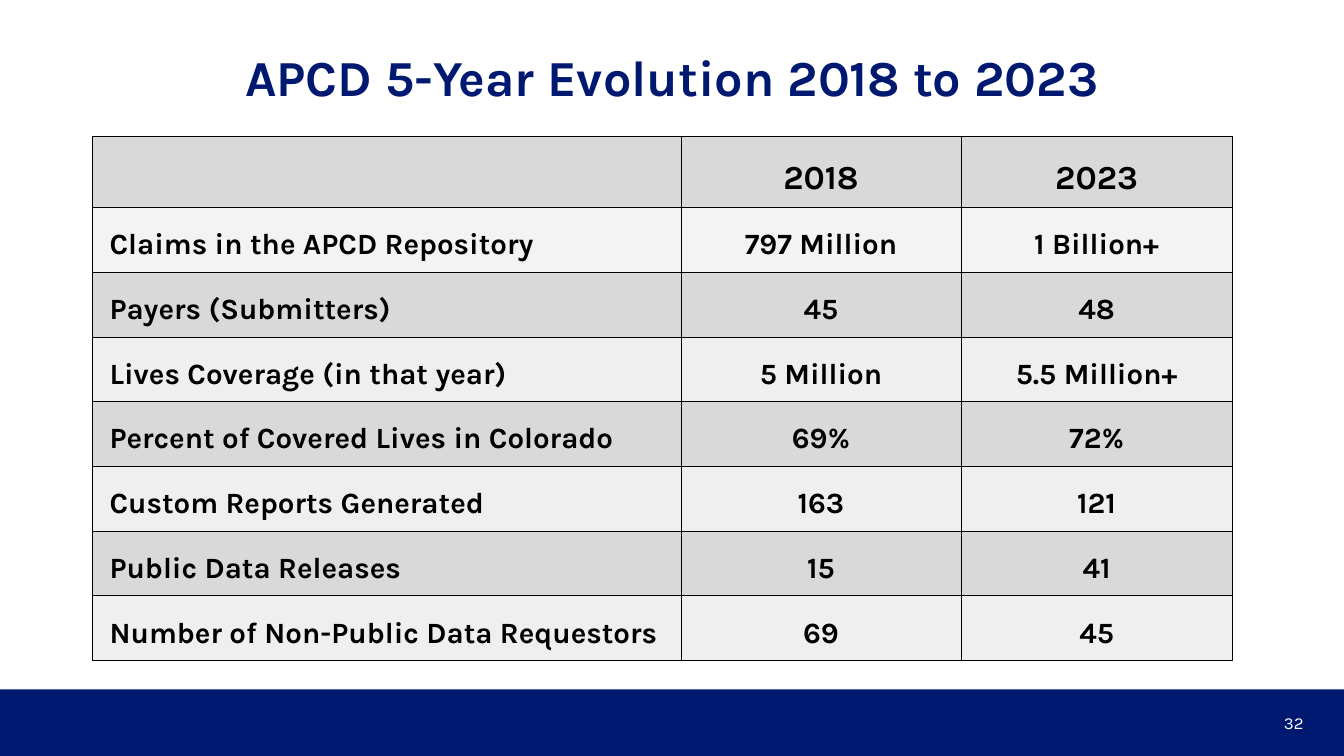
"""Build the APCD five-year evolution slide."""
from dataclasses import dataclass

from lxml.etree import SubElement as Sub
from pptx import Presentation
from pptx.dml.color import RGBColor
from pptx.enum.shapes import MSO_SHAPE as Kind
from pptx.enum.text import MSO_ANCHOR as Anchor, PP_ALIGN as Align
from pptx.oxml.ns import qn
from pptx.slide import Slide
from pptx.table import _Cell as Cell
from pptx.text.text import _Paragraph as Para
from pptx.util import Cm, Pt

NAVY = RGBColor(0x00, 0x19, 0x70)
WHITE = RGBColor(0xFF, 0xFF, 0xFF)
BLACK = RGBColor(0x00, 0x00, 0x00)
GREY = RGBColor(0xD9, 0xD9, 0xD9)
PALE = RGBColor(0xEF, 0xEF, 0xEF)
LIGHT = RGBColor(0xF3, 0xF3, 0xF3)
FONT = "Karla"
WIDTHS = (14.83, 7.06, 6.83)
HEAD, BODY = 1.8, 1.63
PAD = Cm(0.25)


@dataclass
class Row:
    label: str
    old: str
    new: str
    fill: RGBColor
    size: int = 21


@dataclass
class Label:
    text: str
    left: float
    top: float
    width: float
    size: int
    color: RGBColor
    align: Align
    bold: bool = False


ROWS = (
    Row("", "2018", "2023", GREY, 24),
    Row("Claims in the APCD Repository", "797 Million", "1 Billion+", LIGHT),
    Row("Payers (Submitters)", "45", "48", GREY),
    Row("Lives Coverage (in that year)", "5 Million", "5.5 Million+", PALE),
    Row("Percent of Covered Lives in Colorado", "69%", "72%", GREY),
    Row("Custom Reports Generated", "163", "121", PALE),
    Row("Public Data Releases", "15", "41", GREY),
    Row("Number of Non-Public Data Requestors", "69", "45", PALE),
)
LABELS = (
    Label("APCD 5-Year Evolution 2018 to 2023", 2.33, 1.42, 29.21, 36, NAVY,
          Align.CENTER, True),
    Label("32", 25.48, 17.7, 7.62, 12, WHITE, Align.RIGHT),
)


def style(para: Para, size: int, color: RGBColor, bold: bool) -> None:
    """Format the runs of a paragraph."""
    for run in para.runs:
        font = run.font
        font.name, font.size, font.bold = FONT, Pt(size), bold
        font.color.rgb = color


def add_band(slide: Slide) -> None:
    """Draw the footer band."""
    band = slide.shapes.add_shape(Kind.RECTANGLE, 0, Cm(17.37), Cm(33.87), Cm(1.68))
    band.shadow.inherit = False
    band.fill.solid()
    band.fill.fore_color.rgb = NAVY
    band.line.fill.background()


def add_label(slide: Slide, item: Label) -> None:
    """Add one line of text."""
    box = slide.shapes.add_textbox(Cm(item.left), Cm(item.top), Cm(item.width), Cm(1.02))
    frame = box.text_frame
    frame.word_wrap = True
    frame.vertical_anchor = Anchor.MIDDLE
    frame.text = item.text
    para = frame.paragraphs[0]
    para.alignment = item.align
    style(para, item.size, item.color, item.bold)


def add_edges(cell: Cell) -> None:
    """Give a cell thin black borders."""
    props = cell._tc.get_or_add_tcPr()
    for spot, side in enumerate(("a:lnL", "a:lnR", "a:lnT", "a:lnB")):
        line = Sub(props, qn(side), w=str(Pt(0.5)))
        Sub(Sub(line, qn("a:solidFill")), qn("a:srgbClr"), val=str(BLACK))
        props.insert(spot, line)


def fill_cell(cell: Cell, text: str, row: Row, align: Align) -> None:
    """Write and format one cell."""
    cell.fill.solid()
    cell.fill.fore_color.rgb = row.fill
    cell.margin_left = cell.margin_right = PAD
    cell.margin_top = cell.margin_bottom = PAD
    cell.vertical_anchor = Anchor.BOTTOM
    add_edges(cell)
    cell.text_frame.text = text
    para = cell.text_frame.paragraphs[0]
    para.alignment = align
    para.line_spacing = 1.15
    props = para._p.get_or_add_pPr()
    for side in ("marL", "marR"):
        props.set(side, str(Cm(0.18)))
    style(para, row.size, BLACK, True)


def add_grid(slide: Slide) -> None:
    """Add the comparison table."""
    high = HEAD + BODY * (len(ROWS) - 1)
    grid = slide.shapes.add_table(len(ROWS), len(WIDTHS), Cm(2.33), Cm(3.43),
                                  Cm(sum(WIDTHS)), Cm(high)).table
    grid.first_row = grid.horz_banding = False
    for col, width in zip(grid.columns, WIDTHS):
        col.width = Cm(width)
    for r, row in enumerate(ROWS):
        grid.rows[r].height = Cm(BODY if r else HEAD)
        for c, text in enumerate((row.label, row.old, row.new)):
            fill_cell(grid.cell(r, c), text, row, Align.CENTER if c else Align.LEFT)


def main() -> None:
    """Build and save the deck."""
    deck = Presentation()
    deck.slide_width, deck.slide_height = Cm(33.87), Cm(19.05)
    slide = deck.slides.add_slide(deck.slide_layouts[6])
    add_band(slide)
    for item in LABELS:
        add_label(slide, item)
    add_grid(slide)
    deck.save("out.pptx")


if __name__ == "__main__":
    main()
